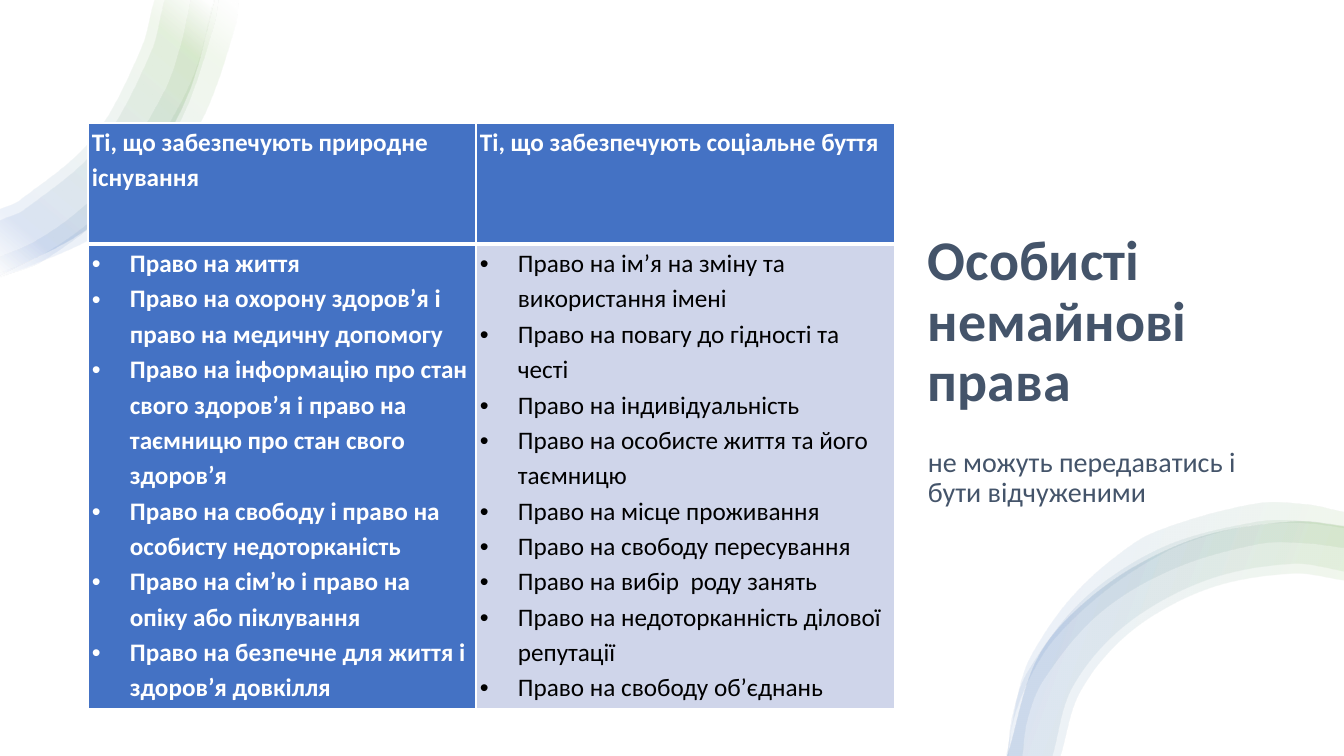
import math

import pptx
import pptx.dml.color
import pptx.enum.shapes
import pptx.enum.text
import pptx.oxml
import pptx.oxml.ns
import pptx.util

RGBColor = pptx.dml.color.RGBColor
WHITE = RGBColor(0xFF, 0xFF, 0xFF)
BLACK = RGBColor(0x00, 0x00, 0x00)
BLUE = RGBColor(0x44, 0x72, 0xC4)
GREEN = RGBColor(0x70, 0xAD, 0x47)
PALE = RGBColor(0xCF, 0xD5, 0xEA)
SLATE = RGBColor(0x44, 0x54, 0x6A)
FONT = "Calibri"
SCALE = 914400 / 100.8
NAMESPACE = pptx.oxml.ns.nsdecls("a")
GRADIENT = [(2, WHITE), (16, GREEN), (85, BLUE), (100, WHITE)]

TOP_EDGE = [(0, 275), (88, 228), (146, 168), (188, 93), (214, 0)]
TOP_BANDS = [
    ([(0, 277), (90, 239), (135, 205), (174, 161), (206, 112), (235, 28), (239, 0)],
     [(214, 0), (194, 75), (155, 147), (122, 190), (83, 227), (37, 257), (0, 272)]),
    (TOP_EDGE, [(154, 0), (140, 51), (92, 139), (20, 200), (0, 209)]),
    ([(0, 276), (43, 260), (128, 195), (162, 151), (188, 103), (214, 23), (218, 0)],
     [(190, 0), (181, 42), (164, 91), (111, 177), (75, 213), (34, 241), (0, 256)]),
    (TOP_EDGE, [(164, 0), (150, 54), (99, 146), (25, 209), (0, 220)]),
]
BOTTOM_EDGE = [(1, 252), (34, 149), (100, 81), (188, 35), (285, 18), (337, 23)]
BOTTOM_BANDS = [
    (BOTTOM_EDGE, [(337, 77), (285, 70), (201, 85), (125, 127), (74, 187), (54, 252)]),
    (BOTTOM_EDGE, [(337, 68), (285, 60), (198, 77), (119, 121), (66, 183), (46, 252)]),
    ([(1, 252), (6, 212), (21, 168), (77, 95), (156, 43), (248, 18), (296, 17), (337, 22)],
     [(337, 44), (295, 39), (251, 40), (166, 65), (92, 110), (37, 176), (21, 216), (16, 252)]),
    ([(0, 252), (17, 170), (39, 128), (68, 90), (106, 55), (148, 28), (246, 0), (297, 0), (337, 8)],
     [(337, 24), (295, 19), (249, 21), (203, 31), (159, 48), (100, 86), (49, 134), (24, 173), (7, 217), (2, 252)]),
]

HEADINGS = ["Ті, що забезпечують природне існування", "Ті, що забезпечують соціальне буття"]
NATURAL_RIGHTS = [
    "Право на життя",
    "Право на охорону здоров’я і право на медичну допомогу",
    "Право на інформацію про стан свого здоров’я і право на таємницю про стан свого здоров’я",
    "Право на свободу і право на особисту недоторканість",
    "Право на сім’ю і право на опіку або піклування",
    "Право на безпечне для життя і здоров’я довкілля",
]
SOCIAL_RIGHTS = [
    "Право на ім’я на зміну та використання імені",
    "Право на повагу до гідності та честі",
    "Право на індивідуальність",
    "Право на особисте життя та його таємницю",
    "Право на місце проживання",
    "Право на свободу пересування",
    "Право на вибір  роду занять",
    "Право на недоторканність ділової репутації",
    "Право на свободу об’єднань",
]


def px(length):
    """Turn px into EMU."""
    return pptx.util.Emu(round(length * SCALE))


def curve_handles(points):
    """Yield the two Bezier handles of each segment of a smooth curve."""
    padded = [points[0], *points, points[-1]]
    tangents = []
    for before, here, after in zip(padded, points, padded[2:]):
        reach = math.dist(before, here) + math.dist(here, after)
        tangents.append([(b - a) / reach for a, b in zip(before, after)])
    for start, end, leave, arrive in zip(points, points[1:], tangents, tangents[1:]):
        third = math.dist(start, end) / 3
        yield ([p + t * third for p, t in zip(start, leave)],
               [p - t * third for p, t in zip(end, arrive)])


def round_edges(band, outer, inner):
    """Turn the straight segments along both edges of a band into curves."""
    left = min(x for x, y in outer + inner)
    top = min(y for x, y in outer + inner)
    segments = list(band._element.iter(pptx.oxml.ns.qn("a:lnTo")))
    handles = [*curve_handles(outer), None, *curve_handles(inner)]
    for segment, pair in zip(segments, handles):
        if pair:
            curve = pptx.oxml.parse_xml(f"<a:cubicBezTo {NAMESPACE}>" + "".join(
                f'<a:pt x="{px(x - left)}" y="{px(y - top)}"/>' for x, y in pair) + "</a:cubicBezTo>")
            curve.append(segment[0])
            segment.getparent().replace(segment, curve)


def add_ring(page, left, top, bands, angle):
    """Draw overlapping translucent bands from their outer and inner edges."""
    stops = "".join(
        f'<a:gs pos="{place * 1000}"><a:srgbClr val="{color}"><a:alpha val="10000"/></a:srgbClr></a:gs>'
        for place, color in GRADIENT)
    for outer, inner in bands:
        outline = [(px(left + x), px(top + y)) for x, y in outer + inner]
        builder = page.shapes.build_freeform(*outline[0])
        builder.add_line_segments(outline[1:], close=True)
        band = builder.convert_to_shape()
        round_edges(band, outer, inner)
        band.shadow.inherit = False
        band.line.fill.background()
        band.fill.background()
        properties = band._element.spPr
        properties.replace(properties.find(pptx.oxml.ns.qn("a:noFill")), pptx.oxml.parse_xml(
            f'<a:gradFill {NAMESPACE} rotWithShape="1"><a:gsLst>{stops}</a:gsLst>'
            f'<a:lin ang="{angle * 60000}" scaled="0"/></a:gradFill>'))


def add_text(page, left, top, width, height, text, size, bold, anchor):
    """Add a wrapped block of slate text."""
    box = page.shapes.add_textbox(px(left), px(top), px(width), px(height))
    box.text_frame.word_wrap = True
    box.text_frame.vertical_anchor = anchor
    para = box.text_frame.paragraphs[0]
    para.text = text
    para.line_spacing = 0.9
    style_font(para.font, size, bold, SLATE)


def style_font(font, size, bold, color):
    """Set the look of a font."""
    font.name, font.size, font.bold = FONT, pptx.util.Pt(size), bold
    font.color.rgb = color


def fill_cell(cell, lines, bulleted, fill, color, bold, bottom):
    """Write a cell's paragraphs and set its fill and borders."""
    cell.margin_left = cell.margin_right = px(4)
    cell.margin_top = cell.margin_bottom = 0
    cell.fill.solid()
    cell.fill.fore_color.rgb = fill
    properties = cell._tc.get_or_add_tcPr()
    for index, (side, width) in enumerate(zip("LRTB", (1, 1, 1, bottom))):
        properties.insert(index, pptx.oxml.parse_xml(
            f'<a:ln{side} {NAMESPACE} w="{width * 12700}"><a:solidFill>'
            f'<a:srgbClr val="{WHITE}"/></a:solidFill></a:ln{side}>'))
    frame = cell.text_frame
    for index, line in enumerate(lines):
        para = frame.add_paragraph() if index else frame.paragraphs[0]
        para.text = line
        para.line_spacing = 1.15
        style_font(para.font, 18, bold, color)
        if bulleted:
            layout = para._p.get_or_add_pPr()
            layout.set("marL", str(px(38)))
            layout.set("indent", str(-px(38)))
            for tag in ('buFont {} typeface="Arial"', 'buChar {} char="•"'):
                layout.insert_element_before(
                    pptx.oxml.parse_xml(f"<a:{tag.format(NAMESPACE)}/>"), "a:tabLst", "a:defRPr", "a:extLst")


def add_rights_table(page, left, top, widths, heights):
    """Build the two-column table of rights."""
    table = page.shapes.add_table(2, 2, px(left), px(top), px(sum(widths)), px(sum(heights))).table
    table.horz_banding = False
    for column, width in zip(table.columns, widths):
        column.width = px(width)
    for row, height in zip(table.rows, heights):
        row.height = px(height)
    for index, heading in enumerate(HEADINGS):
        fill_cell(table.cell(0, index), [heading], False, BLUE, WHITE, True, 3)
    fill_cell(table.cell(1, 0), NATURAL_RIGHTS, True, BLUE, WHITE, True, 1)
    fill_cell(table.cell(1, 1), SOCIAL_RIGHTS, True, PALE, BLACK, False, 1)


def add_background(page, width, height):
    """Cover the page with white."""
    cover = page.shapes.add_shape(pptx.enum.shapes.MSO_SHAPE.RECTANGLE, 0, 0, px(width), px(height))
    cover.shadow.inherit = False
    cover.fill.solid()
    cover.fill.fore_color.rgb = WHITE
    cover.line.fill.background()


def main():
    """Build and save the deck."""
    deck = pptx.Presentation()
    deck.slide_width, deck.slide_height = px(1344), px(756)
    page = deck.slides.add_slide(deck.slide_layouts[6])
    anchors = pptx.enum.text.MSO_ANCHOR
    add_background(page, 1344, 756)
    add_text(page, 918, 123, 375, 296, "Особисті немайнові права", 40, True, anchors.BOTTOM)
    add_text(page, 918, 443, 375, 188, "не можуть передаватись і бути відчуженими", 20, False, anchors.TOP)
    add_ring(page, 0, 0, TOP_BANDS, 130)
    add_ring(page, 1007, 504, BOTTOM_BANDS, 200)
    add_rights_table(page, 88, 123, [388, 419], [121, 465])
    deck.save("out.pptx")


if __name__ == "__main__":
    main()
